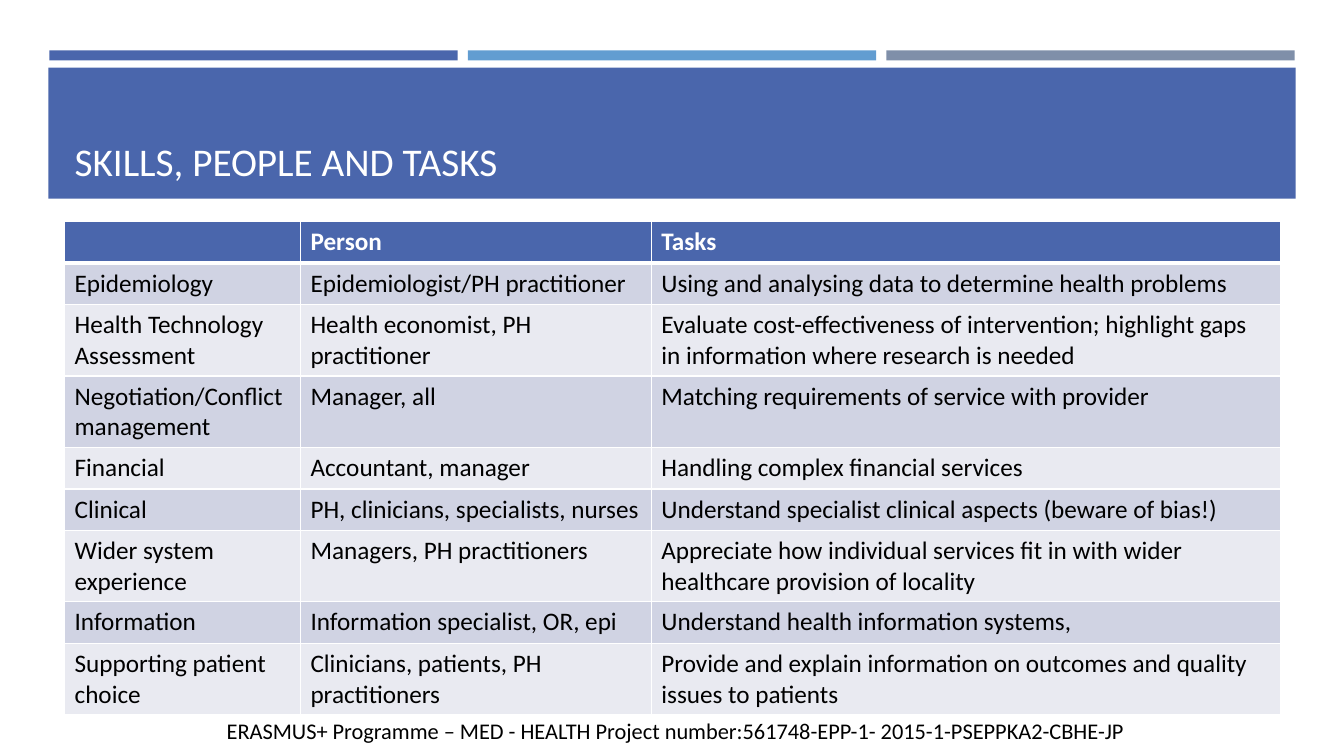
from lxml.etree import SubElement
from pptx import Presentation
from pptx.dml.color import RGBColor
from pptx.enum.shapes import MSO_SHAPE as Shape
from pptx.enum.text import MSO_ANCHOR as Anchor, MSO_AUTO_SIZE as AutoSize, PP_ALIGN as Align
from pptx.oxml.ns import qn
from pptx.util import Inches, Pt

BLUE = RGBColor(0x4A, 0x66, 0xAC)
SKY = RGBColor(0x62, 0x9D, 0xD1)
SLATE = RGBColor(0x7F, 0x8F, 0xA9)
BAND_DARK = RGBColor(0xD0, 0xD3, 0xE3)
BAND_LIGHT = RGBColor(0xE9, 0xEA, 0xF1)
WHITE = RGBColor(0xFF, 0xFF, 0xFF)
BLACK = RGBColor(0, 0, 0)

COLUMN_WIDTHS = (2.34, 3.48, 6.24)
ROW_HEIGHT = 0.41
ROWS = (
    ("", "Person", "Tasks"),
    ("Epidemiology", "Epidemiologist/PH practitioner",
     "Using and analysing data to determine health problems"),
    ("Health Technology Assessment", "Health economist, PH practitioner",
     "Evaluate cost-effectiveness of intervention; highlight gaps in information "
     "where research is needed"),
    ("Negotiation/Conflict management", "Manager, all",
     "Matching requirements of service with provider"),
    ("Financial", "Accountant, manager", "Handling complex financial services"),
    ("Clinical", "PH, clinicians, specialists, nurses",
     "Understand specialist clinical aspects (beware of bias!)"),
    ("Wider system experience", "Managers, PH practitioners",
     "Appreciate how individual services fit in with wider healthcare provision of locality"),
    ("Information", "Information specialist, OR, epi",
     "Understand health information systems,"),
    ("Supporting patient choice", "Clinicians, patients, PH practitioners",
     "Provide and explain information on outcomes and quality issues to patients"),
)


class SlideBuilder:
    font_name = "Calibri"

    def __init__(self, slide):
        self.slide = slide

    def style(self, paragraph, size, color, bold=False):
        font = paragraph.font
        font.name, font.size, font.bold = self.font_name, Pt(size), bold
        font.color.rgb = color

    def bar(self, left, top, width, height, color):
        shape = self.slide.shapes.add_shape(
            Shape.RECTANGLE, Inches(left), Inches(top), Inches(width), Inches(height))
        shape.shadow.inherit = False
        shape.fill.solid()
        shape.fill.fore_color.rgb = color
        shape.line.fill.background()

    def title(self, text, left, top, width, height):
        title = self.slide.shapes.title
        title.left, title.top = Inches(left), Inches(top)
        title.width, title.height = Inches(width), Inches(height)
        frame = title.text_frame
        frame.text = text
        frame.auto_size = AutoSize.NONE
        frame.vertical_anchor = Anchor.BOTTOM
        frame.paragraphs[0].alignment = Align.LEFT
        self.style(frame.paragraphs[0], 28, WHITE)
        # Bring the title in front of the banner
        title.element.getparent().append(title.element)

    def footer(self, text, left, top, width, height):
        box = self.slide.shapes.add_textbox(
            Inches(left), Inches(top), Inches(width), Inches(height))
        frame = box.text_frame
        frame.word_wrap = True
        frame.text = text
        frame.paragraphs[0].alignment = Align.CENTER
        self.style(frame.paragraphs[0], 16, BLACK)

    def borders(self, cell, top, bottom):
        """Draw white cell borders; top and bottom are widths in points."""
        properties = cell._tc.get_or_add_tcPr()
        for side, width in (("L", 1), ("R", 1), ("T", top), ("B", bottom)):
            line = SubElement(properties, qn(f"a:ln{side}"), w=str(Pt(width)))
            fill = SubElement(line, qn("a:solidFill"))
            SubElement(fill, qn("a:srgbClr"), val=str(WHITE))

    def table(self, rows, left, top, column_widths, row_height):
        table = self.slide.shapes.add_table(
            len(rows), len(column_widths), Inches(left), Inches(top),
            Inches(sum(column_widths)), Inches(row_height * len(rows))).table
        table.horz_banding = False
        for column, width in zip(table.columns, column_widths):
            column.width = Inches(width)
        for index, texts in enumerate(rows):
            header = index == 0
            color = BLUE if header else BAND_DARK if index % 2 else BAND_LIGHT
            table.rows[index].height = Inches(row_height)
            for column, text in enumerate(texts):
                cell = table.cell(index, column)
                self.borders(cell, 3 if index == 1 else 1, 3 if header else 1)
                cell.fill.solid()
                cell.fill.fore_color.rgb = color
                cell.text = text
                self.style(cell.text_frame.paragraphs[0], 18,
                           WHITE if header else BLACK, header)


def main():
    presentation = Presentation()
    presentation.slide_width, presentation.slide_height = Inches(13.33), Inches(7.5)
    builder = SlideBuilder(presentation.slides.add_slide(presentation.slide_layouts[5]))
    for index, color in enumerate((BLUE, SKY, SLATE)):
        builder.bar(0.49 + 4.15 * index, 0.5, 4.05, 0.1, color)
    builder.bar(0.48, 0.67, 12.37, 1.3, BLUE)
    builder.footer("ERASMUS+ Programme – MED - HEALTH Project number:"
                   "561748-EPP-1- 2015-1-PSEPPKA2-CBHE-JP", 1.59, 7.07, 10.22, 0.37)
    builder.title("SKILLS, PEOPLE AND TASKS", 0.64, 0.77, 12.06, 1.11)
    builder.table(ROWS, 0.64, 2.2, COLUMN_WIDTHS, ROW_HEIGHT)
    presentation.save("out.pptx")


if __name__ == "__main__":
    main()
